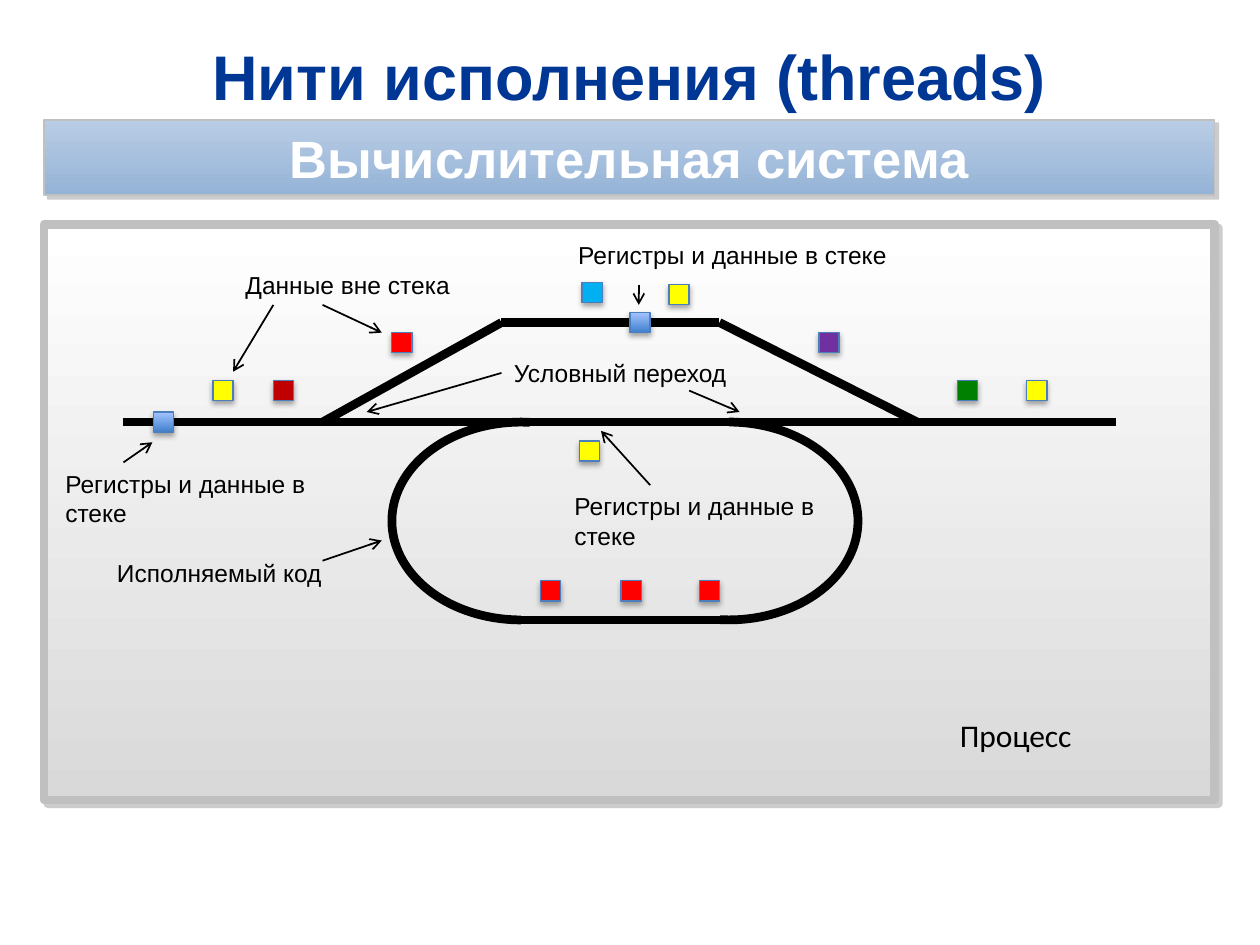
from lxml.etree import SubElement
from pptx import Presentation
from pptx.dml.color import RGBColor
from pptx.enum.shapes import MSO_CONNECTOR as Connector, MSO_SHAPE as Shape
from pptx.enum.text import MSO_ANCHOR as Anchor, MSO_AUTO_SIZE as AutoSize, PP_ALIGN as Align
from pptx.oxml.ns import qn
from pptx.util import Inches, Pt

# Content
TITLE = "Нити исполнения (threads)"
SYSTEM = "Вычислительная система"
STACK = "Регистры и данные в стеке"
LABELS = [  # text, (left, top, width, height)
    (STACK, (4.46, 3.85, 2.13, 0.57)),
    ("Исполняемый код", (0.83, 4.38, 3.15, 0.34)),
    ("Данные вне стека", (1.85, 2.09, 2.13, 0.34)),
    ("Условный переход", (3.98, 2.79, 2.05, 0.34)),
    (STACK, (4.49, 1.86, 3.27, 0.34)),
    (STACK, (0.42, 3.67, 2.13, 0.57)),
]

# Track geometry: heights of the three levels, then the pieces
UPPER, MAIN, LOWER = 2.56, 3.35, 4.92
TRACKS = [
    (0.98, MAIN, 2.56, MAIN),
    (2.56, MAIN, 3.98, UPPER),
    (3.98, UPPER, 5.71, UPPER),
    (2.56, MAIN, 8.86, MAIN),
    (5.71, UPPER, 7.28, MAIN),
    (5.75, LOWER, 4.06, LOWER),
]
LOOP_ENDS = [(4.76, 0), (3.11, 180)]  # left, rotation
POINTERS = [
    (2.56, 4.45, 3.03, 4.29),
    (2.17, 2.42, 1.85, 2.95),
    (2.56, 2.42, 3.03, 2.64),
    (3.98, 2.96, 2.91, 3.27),
    (5.47, 3.1, 5.87, 3.27),
    (5.16, 3.85, 4.77, 3.42),
    (5.07, 2.26, 5.07, 2.42),
    (0.98, 3.67, 1.21, 3.51),
]

# Squares: data items have a plain colour, threads a gradient
SIDE = 0.16
THREAD = ("3F80CE", "A4C4FF", 270)
RED, YELLOW = "FF0000", "FFFF00"
SQUARES = [
    (1.22, 3.27, THREAD), (2.17, 3.02, "C00000"), (3.11, 2.64, RED),
    (4.62, 2.24, "00B0F0"), (5.31, 2.26, YELLOW), (6.5, 2.64, "7030A0"),
    (7.6, 3.02, "008000"), (8.15, 3.02, YELLOW), (1.69, 3.02, YELLOW),
    (4.6, 3.5, YELLOW), (5.55, 4.61, RED), (4.93, 4.61, RED),
    (4.29, 4.61, RED), (5, 2.48, THREAD),
]
PANEL_SHADOW = ("808080", 40, 0, 3, 45)  # colour, opacity %, blur, distance, angle
SQUARE_SHADOW = ("000000", 35, 3.1, 1.8, 90)


def color(value):
    return RGBColor.from_string(value)


def inches(*values):
    return [Inches(value) for value in values]


def write(frame, text, size=14, font="Arial", ink="000000", bold=False, align=None):
    frame.word_wrap = True
    para = frame.paragraphs[0]
    para.alignment = align
    span = para.add_run()
    span.text = text
    span.font.size = Pt(size)
    span.font.name = font
    span.font.bold = bold
    span.font.color.rgb = color(ink)


def add_label(text, place, **style):
    box = slide.shapes.add_textbox(*inches(*place))
    write(box.text_frame, text, **style)
    box.text_frame.auto_size = AutoSize.SHAPE_TO_FIT_TEXT


def set_line(item, ink, width):
    item.line.color.rgb = color(ink)
    item.line.width = Pt(width)


def add_box(place, fill, line, shadow):
    box = slide.shapes.add_shape(Shape.RECTANGLE, *inches(*place))
    if isinstance(fill, str):
        box.fill.solid()
        box.fill.fore_color.rgb = color(fill)
    else:
        *stops, angle = fill
        box.fill.gradient()
        box.fill.gradient_angle = 360 - angle  # counted counter-clockwise
        for stop, value in zip(box.fill.gradient_stops, stops):
            stop.color.rgb = color(value)
    set_line(box, *line)
    box.shadow.inherit = False
    ink, opacity, blur, distance, angle = shadow
    effects = box._element.spPr.find(qn("a:effectLst"))
    outer = SubElement(effects, qn("a:outerShdw"), blurRad=str(Pt(blur)), dist=str(Pt(distance)),
                       dir=str(angle * 60000), algn="ctr", rotWithShape="0")
    tint = SubElement(outer, qn("a:srgbClr"), val=ink)
    SubElement(tint, qn("a:alpha"), val=str(opacity * 1000))
    return box


def add_line(ends, width, arrow=False):
    line = slide.shapes.add_connector(Connector.STRAIGHT, *inches(*ends))
    set_line(line, "000000", width)
    if arrow:
        SubElement(line.line._get_or_add_ln(), qn("a:tailEnd"), type="arrow")
    SubElement(line._element.spPr, qn("a:effectLst"))


deck = Presentation()
deck.slide_width, deck.slide_height = inches(10, 7.5)
slide = deck.slides.add_slide(deck.slide_layouts[5])

# Title
title = slide.shapes.title
title.left, title.top, title.width, title.height = inches(0.35, 0.26, 9.29, 0.68)
title.text_frame.vertical_anchor = Anchor.MIDDLE
write(title.text_frame, TITLE, size=36, ink="003794", bold=True, align=Align.CENTER)

# Process panel and system bar
add_box((0.35, 1.78, 9.29, 4.57), ("FFFFFF", "D9D9D9", 90), ("C0C0C0", 5), PANEL_SHADOW)
bar = add_box((0.35, 0.95, 9.29, 0.6), ("B9CDE5", "95B3D7", 90), ("C0C0C0", 1), PANEL_SHADOW)
frame = bar.text_frame
frame.margin_left = frame.margin_right = Inches(0.24)
frame.margin_top = frame.margin_bottom = Inches(0.04)
frame.vertical_anchor = Anchor.MIDDLE
write(frame, SYSTEM, size=30, ink="FFFFFF", bold=True, align=Align.CENTER)

# Tracks and the round ends of the loop
for ends in TRACKS:
    add_line(ends, 5)
for left, rotation in LOOP_ENDS:
    arc = slide.shapes.add_shape(Shape.ARC, *inches(left, MAIN, 2.05, LOWER - MAIN))
    arc.adjustments[0], arc.adjustments[1] = 162, 57.08
    arc.rotation = rotation
    arc.fill.background()
    set_line(arc, "000000", 5)
    arc.shadow.inherit = False

# Threads and data
for left, top, fill in SQUARES:
    add_box((left, top, SIDE, SIDE), fill, ("4B7EBC", 0.75), SQUARE_SHADOW)

# Labels and pointers
for text, place in LABELS:
    add_label(text, place)
add_label("Процесс", (7.52, 5.63, 1.73, 0.4), size=18, font="Calibri")
for ends in POINTERS:
    add_line(ends, 1, arrow=True)

deck.save("out.pptx")
